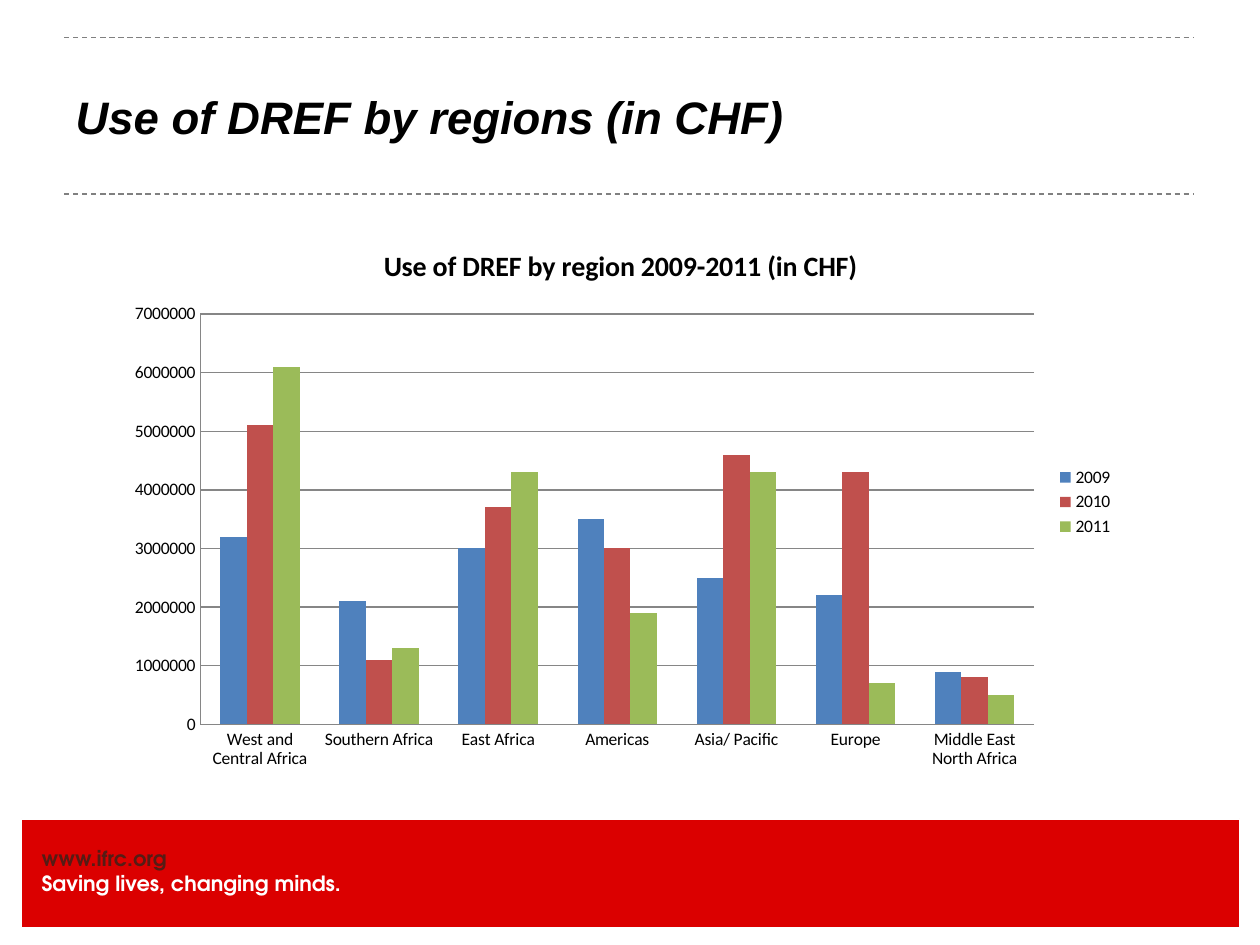
from pptx import Presentation
from pptx.chart.data import CategoryChartData
from pptx.dml.color import RGBColor
from pptx.enum import chart as ch, dml, shapes, text
from pptx.oxml.ns import qn
from pptx.util import Inches, Pt
from lxml import etree

BLACK = RGBColor(0x00, 0x00, 0x00)
WHITE = RGBColor(0xFF, 0xFF, 0xFF)
RED = RGBColor(0xDB, 0x00, 0x00)
BROWN = RGBColor(0x55, 0x1C, 0x15)
GRAY = RGBColor(0x80, 0x80, 0x80)
AXIS = RGBColor(0x86, 0x86, 0x86)
SERIES = [
    ("2009", RGBColor(0x4F, 0x81, 0xBD),
     (3200000, 2100000, 3000000, 3500000, 2500000, 2200000, 900000)),
    ("2010", RGBColor(0xC0, 0x50, 0x4D),
     (5100000, 1100000, 3700000, 3000000, 4600000, 4300000, 800000)),
    ("2011", RGBColor(0x9B, 0xBB, 0x59),
     (6100000, 1300000, 4300000, 1900000, 4300000, 700000, 500000)),
]

prs = Presentation()
prs.slide_width, prs.slide_height = Inches(10), Inches(7.5)
s = prs.slides.add_slide(prs.slide_layouts[5])

band = s.shapes.add_shape(shapes.MSO_SHAPE.RECTANGLE, Inches(0.17), Inches(6.5),
                          Inches(9.67), Inches(0.86))
band.shadow.inherit = False
band.fill.solid()
band.fill.fore_color.rgb = RED
band.line.color.rgb = WHITE
band.line.width = Pt(0.75)

footer = s.shapes.add_textbox(Inches(0.33), Inches(6.71), Inches(3.42), Inches(0.4))
tf = footer.text_frame
tf.word_wrap = True
tf.margin_left = tf.margin_top = tf.margin_right = tf.margin_bottom = 0
tf.text = "www.ifrc.org\nSaving lives, changing minds."
for p, color in zip(tf.paragraphs, (BROWN, WHITE)):
    p.font.name = "TeX Gyre Adventor"
    p.font.size = Pt(12)
    p.font.bold = True
    p.font.color.rgb = color

for y in (0.3, 1.54):
    rule = s.shapes.add_connector(shapes.MSO_CONNECTOR.STRAIGHT, Inches(0.51), Inches(y),
                                  Inches(9.48), Inches(y))
    rule.line.color.rgb = GRAY
    rule.line.width = Pt(0.75)
    rule.line.dash_style = dml.MSO_LINE.DASH
    etree.SubElement(rule._element.spPr, qn("a:effectLst"))

title = s.shapes.title
title.left, title.top, title.width, title.height = (Inches(v) for v in (0.5, 0.3, 9, 1.25))
tf = title.text_frame
tf.text = "Use of DREF by regions (in CHF)"
tf.vertical_anchor = text.MSO_ANCHOR.MIDDLE
p = tf.paragraphs[0]
p.alignment = text.PP_ALIGN.LEFT
p.font.name = "Arial"
p.font.size = Pt(26)
p.font.bold = p.font.italic = True
p.font.color.rgb = BLACK

data = CategoryChartData()
data.categories = ["West and Central Africa", "Southern Africa", "East Africa", "Americas",
                   "Asia/ Pacific", "Europe", "Middle East North Africa"]
for name, _, values in SERIES:
    data.add_series(name, values)
chart = s.shapes.add_chart(ch.XL_CHART_TYPE.COLUMN_CLUSTERED, Inches(0.91), Inches(1.78),
                           Inches(8.03), Inches(4.41), data).chart
chart.font.name = "Calibri"
chart.font.size = Pt(10)
chart.font.color.rgb = BLACK

chart.has_title = True
tf = chart.chart_title.text_frame
tf.text = "Use of DREF by region 2009-2011 (in CHF)"
p = tf.paragraphs[0]
p.font.name = "Calibri"
p.font.size = Pt(16)
p.font.bold = True
p.font.color.rgb = BLACK
chart.chart_title.include_in_layout = False

chart.has_legend = True
chart.legend.position = ch.XL_LEGEND_POSITION.RIGHT
chart.legend.include_in_layout = False

plot = chart.plots[0]
plot.gap_width = 150
plot.overlap = 0
plot.vary_by_categories = False
for series, (_, color, _) in zip(plot.series, SERIES):
    series.format.fill.solid()
    series.format.fill.fore_color.rgb = color

for axis in (chart.category_axis, chart.value_axis):
    axis.major_tick_mark = axis.minor_tick_mark = ch.XL_TICK_MARK.NONE
    axis.format.line.color.rgb = AXIS
    axis.format.line.width = Pt(0.75)
axis = chart.value_axis
axis.minimum_scale, axis.maximum_scale, axis.major_unit = 0, 7000000, 1000000
axis.has_major_gridlines = True
axis.major_gridlines.format.line.color.rgb = AXIS
axis.major_gridlines.format.line.width = Pt(0.75)
axis.tick_labels.number_format = "General"
axis.tick_labels.number_format_is_linked = False

prs.save("out.pptx")
